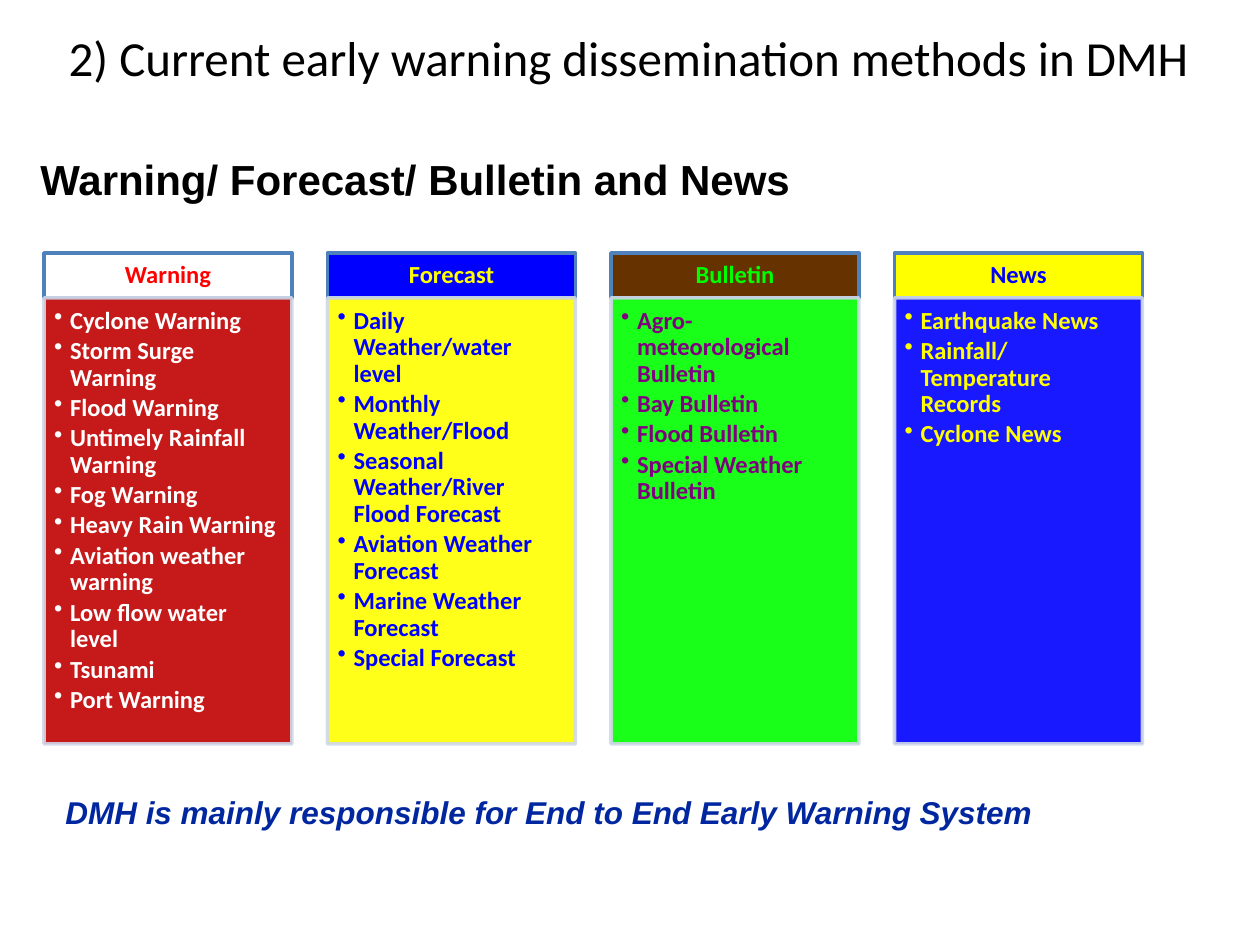
"""Builds the slide on early warning dissemination methods."""
from lxml import etree
from pptx import Presentation
from pptx import util as u
from pptx.dml.color import RGBColor
from pptx.enum import shapes, text
from pptx.oxml.ns import qn

PX = 914400 / 126
LEFT, TOP, WIDTH, PITCH = 44, 253, 248, 283.5
HEAD_H, BODY_H = 45, 446
BULLET_INDENT = 16

TEXTS = [
    ("Warning/ Forecast/ Bulletin and News", (28, 147, 980, 64),
     dict(size=24, font="Arial", color="000000", bold=True)),
    ("2) Current early warning dissemination methods in DMH", (0, 21, 1257, 72),
     dict(size=28, font="Calibri", color="000000", align="CENTER")),
    ("DMH is mainly responsible for End to End Early Warning System", (53, 787, 1034, 55),
     dict(size=18, font="Arial", color="00279F", bold=True, italic=True)),
]

COLUMNS = [
    dict(title="Warning", head=("FFFFFF", "FF0000"), body=("C00000", "FFFFFF"),
         items=["Cyclone Warning", "Storm Surge Warning", "Flood Warning",
                "Untimely Rainfall Warning", "Fog Warning", "Heavy Rain Warning",
                "Aviation weather warning", "Low flow water level", "Tsunami",
                "Port Warning"]),
    dict(title="Forecast", head=("0000FF", "FFFF00"), body=("FFFF00", "0000FF"),
         items=["Daily Weather/water level", "Monthly Weather/Flood",
                "Seasonal Weather/River Flood Forecast", "Aviation Weather Forecast",
                "Marine Weather Forecast", "Special Forecast"]),
    dict(title="Bulletin", head=("663300", "00FF00"), body=("00FF00", "800080"),
         items=["Agro-meteorological Bulletin", "Bay Bulletin", "Flood Bulletin",
                "Special Weather Bulletin"]),
    dict(title="News", head=("FFFF00", "0000FF"), body=("0000FF", "FFFF00"),
         items=["Earthquake News", "Rainfall/Temperature Records", "Cyclone News"]),
]


def px(n):
    return u.Emu(round(n * PX))


def rgb(value):
    return RGBColor.from_string(value)


def style(p, size, font, color, bold=False, italic=False, align="LEFT"):
    p.alignment = getattr(text.PP_ALIGN, align)
    for r in p.runs:
        f = r.font
        f.size, f.name, f.bold, f.italic = u.Pt(size), font, bold, italic
        f.color.rgb = rgb(color)


def set_margins(tf, left, top, right, bottom):
    tf.margin_left, tf.margin_top = px(left), px(top)
    tf.margin_right, tf.margin_bottom = px(right), px(bottom)


def add_text(s, words, box, look):
    tf = s.shapes.add_textbox(*map(px, box)).text_frame
    tf.word_wrap = True
    tf.text = words
    style(tf.paragraphs[0], **look)


def set_alpha(color_format_parent, percent):
    clr = color_format_parent.find(".//" + qn("a:srgbClr"))
    etree.SubElement(clr, qn("a:alpha")).set("val", str(percent * 1000))


def add_box(s, box, fill, line):
    sp = s.shapes.add_shape(shapes.MSO_SHAPE.RECTANGLE, *map(px, box))
    sp.shadow.inherit = False
    sp.fill.solid()
    sp.fill.fore_color.rgb = rgb(fill)
    sp.line.color.rgb = rgb(line)
    sp.line.width = u.Pt(2)
    sp.text_frame.word_wrap = True
    return sp


def add_bullet(p):
    pPr = p._p.get_or_add_pPr()
    pPr.set("marL", str(px(BULLET_INDENT)))
    pPr.set("indent", str(-px(BULLET_INDENT)))
    etree.SubElement(pPr, qn("a:buChar")).set("char", "•")


def add_column(s, x, col):
    fill, color = col["head"]
    tf = add_box(s, (x, TOP, WIDTH, HEAD_H), fill, "4F81BD").text_frame
    set_margins(tf, 14, 8, 14, 8)
    tf.vertical_anchor = text.MSO_ANCHOR.MIDDLE
    tf.text = col["title"]
    p = tf.paragraphs[0]
    p.line_spacing = 0.9
    style(p, 14, "Calibri", color, bold=True, align="CENTER")

    fill, color = col["body"]
    sp = add_box(s, (x, TOP + HEAD_H, WIDTH, BODY_H), fill, "D0D8E8")
    for part in (sp._element.spPr.find(qn("a:solidFill")), sp._element.spPr.find(qn("a:ln"))):
        set_alpha(part, 90)
    tf = sp.text_frame
    set_margins(tf, 10, 10, 14, 15)
    tf.vertical_anchor = text.MSO_ANCHOR.TOP
    tf.text = "\n".join(col["items"])
    for p in tf.paragraphs:
        p.level = 1
        p.line_spacing = 0.9
        p.space_after = u.Pt(2.2)
        add_bullet(p)
        style(p, 14, "Calibri", color, bold=True)


def main():
    prs = Presentation()
    prs.slide_width, prs.slide_height = px(1260), px(945)
    s = prs.slides.add_slide(prs.slide_layouts[6])
    for i, col in enumerate(COLUMNS):
        add_column(s, LEFT + i * PITCH, col)
    for words, box, look in TEXTS:
        add_text(s, words, box, look)
    prs.save("out.pptx")


if __name__ == "__main__":
    main()
